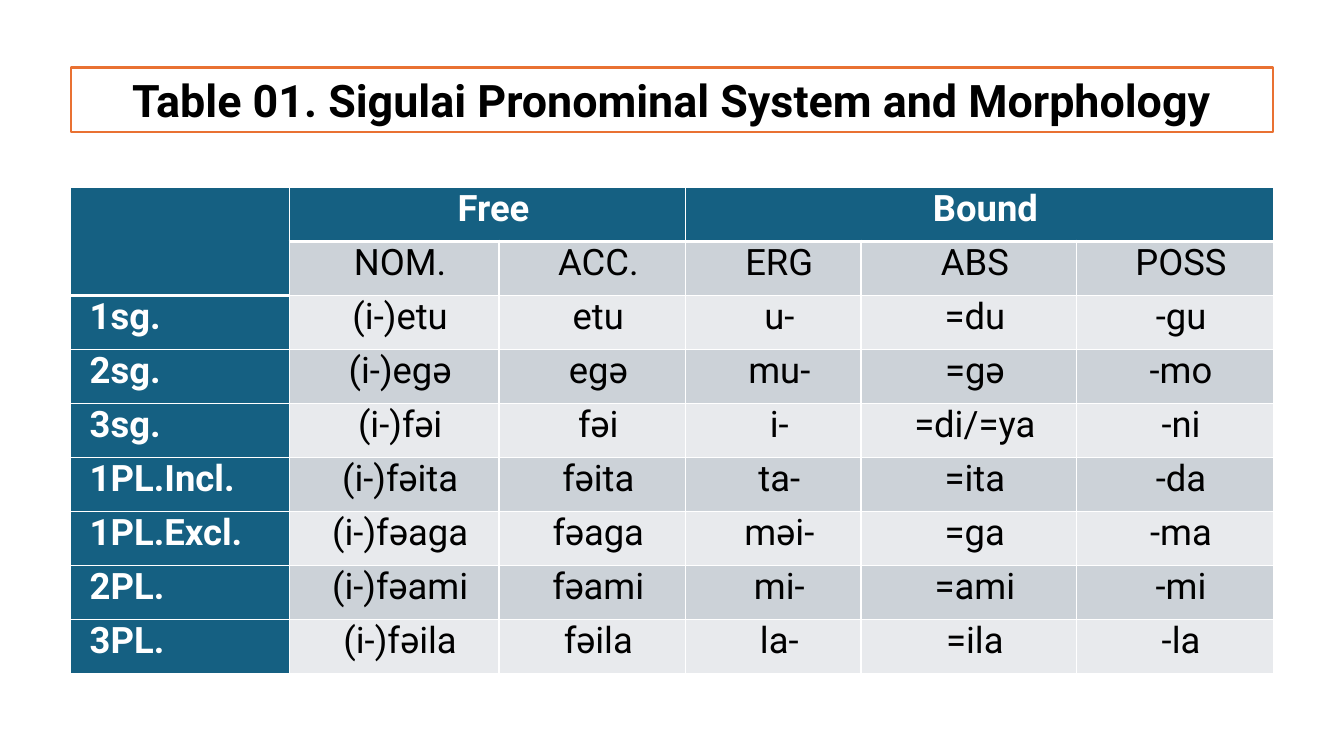
from lxml import etree
from pptx import Presentation
from pptx.dml.color import RGBColor
from pptx.enum import text as t
from pptx.oxml.ns import qn
from pptx.util import Inches, Pt

WHITE = RGBColor(0xFF, 0xFF, 0xFF)
BLACK = RGBColor(0, 0, 0)
ORANGE = RGBColor(0xE9, 0x71, 0x32)
TEAL = RGBColor(0x15, 0x60, 0x82)
DARK_BAND = RGBColor(0xCC, 0xD2, 0xD8)
LIGHT_BAND = RGBColor(0xE8, 0xEA, 0xED)

LEFT, WIDTH = Inches(0.7), Inches(11.93)
COLUMN_WIDTHS = [2.17, 2.08, 1.85, 1.74, 2.14, 1.95]
PRONOUNS = [
    ["", "Free", "", "Bound", "", ""],
    ["", "NOM.", "ACC.", "ERG", "ABS", "POSS"],
    ["1sg.", "(i-)etu", "etu", "u-", "=du", "-gu"],
    ["2sg.", "(i-)egə", "egǝ", "mu-", "=gǝ", "-mo"],
    ["3sg.", "(i-)fǝi", "fǝi", "i-", "=di/=ya", "-ni"],
    ["1PL.Incl.", "(i-)fǝita", "fǝita", "ta-", "=ita", "-da"],
    ["1PL.Excl.", "(i-)fəaga", "fǝaga", "mǝi-", "=ga", "-ma"],
    ["2PL.", "(i-)fǝami", "fǝami", "mi-", "=ami", "-mi"],
    ["3PL.", "(i-)fəila", "fǝila", "la-", "=ila", "-la"],
]


def add_run(paragraph, words, size, color, bold):
    run = paragraph.add_run()
    run.text = words
    run.font.name = "Roboto"
    run.font.size = Pt(size)
    run.font.bold = bold
    run.font.color.rgb = color


def set_borders(cell, top, bottom):
    """Draw white cell edges; top and bottom are widths in points."""
    properties = cell._tc.get_or_add_tcPr()
    for edge, width in (("L", 1), ("R", 1), ("T", top), ("B", bottom)):
        line = etree.SubElement(properties, qn(f"a:ln{edge}"), w=str(Pt(width)))
        solid = etree.SubElement(line, qn("a:solidFill"))
        etree.SubElement(solid, qn("a:srgbClr"), val=str(WHITE))


deck = Presentation()
deck.slide_width, deck.slide_height = Inches(13.33), Inches(7.5)
slide = deck.slides.add_slide(deck.slide_layouts[5])

title = slide.shapes.title
title.left, title.top, title.width, title.height = LEFT, Inches(0.67), WIDTH, Inches(0.64)
title.fill.solid()
title.fill.fore_color.rgb = WHITE
title.line.color.rgb = ORANGE
title.line.width = Pt(1.5)
title.text_frame.vertical_anchor = t.MSO_ANCHOR.TOP
heading = title.text_frame.paragraphs[0]
heading.alignment = t.PP_ALIGN.CENTER
add_run(heading, "Table 01. Sigulai Pronominal System and Morphology", 32, BLACK, True)

paradigm = slide.shapes.add_table(
    len(PRONOUNS), len(COLUMN_WIDTHS), LEFT, Inches(1.86), WIDTH, Inches(4.82)
).table
paradigm.first_col = True
for column, width in zip(paradigm.columns, COLUMN_WIDTHS):
    column.width = Inches(width)

for first, last in (((0, 0), (1, 0)), ((0, 1), (0, 2)), ((0, 3), (0, 5))):
    paradigm.cell(*first).merge(paradigm.cell(*last))

for r, forms in enumerate(PRONOUNS):
    for c, form in enumerate(forms):
        cell = paradigm.cell(r, c)
        is_header = r == 0 or c == 0
        header_end = 1 if c == 0 else 0
        set_borders(
            cell,
            top=3 if r == header_end + 1 else 1,
            bottom=3 if r == header_end or (r, c) == (0, 0) else 1,
        )
        cell.fill.solid()
        band = DARK_BAND if r % 2 else LIGHT_BAND
        cell.fill.fore_color.rgb = TEAL if is_header else band
        cell.margin_left = cell.margin_right = Inches(0.19)
        cell.margin_top = cell.margin_bottom = 0
        if not form:
            continue
        paragraph = cell.text_frame.paragraphs[0]
        if c > 0:
            paragraph.alignment = t.PP_ALIGN.CENTER
            indents = paragraph._p.get_or_add_pPr()
            indents.set("marL", "0")
            indents.set("indent", str(Inches(0.12)))
        add_run(paragraph, form, 26, WHITE if is_header else BLACK, is_header)

deck.save("out.pptx")
